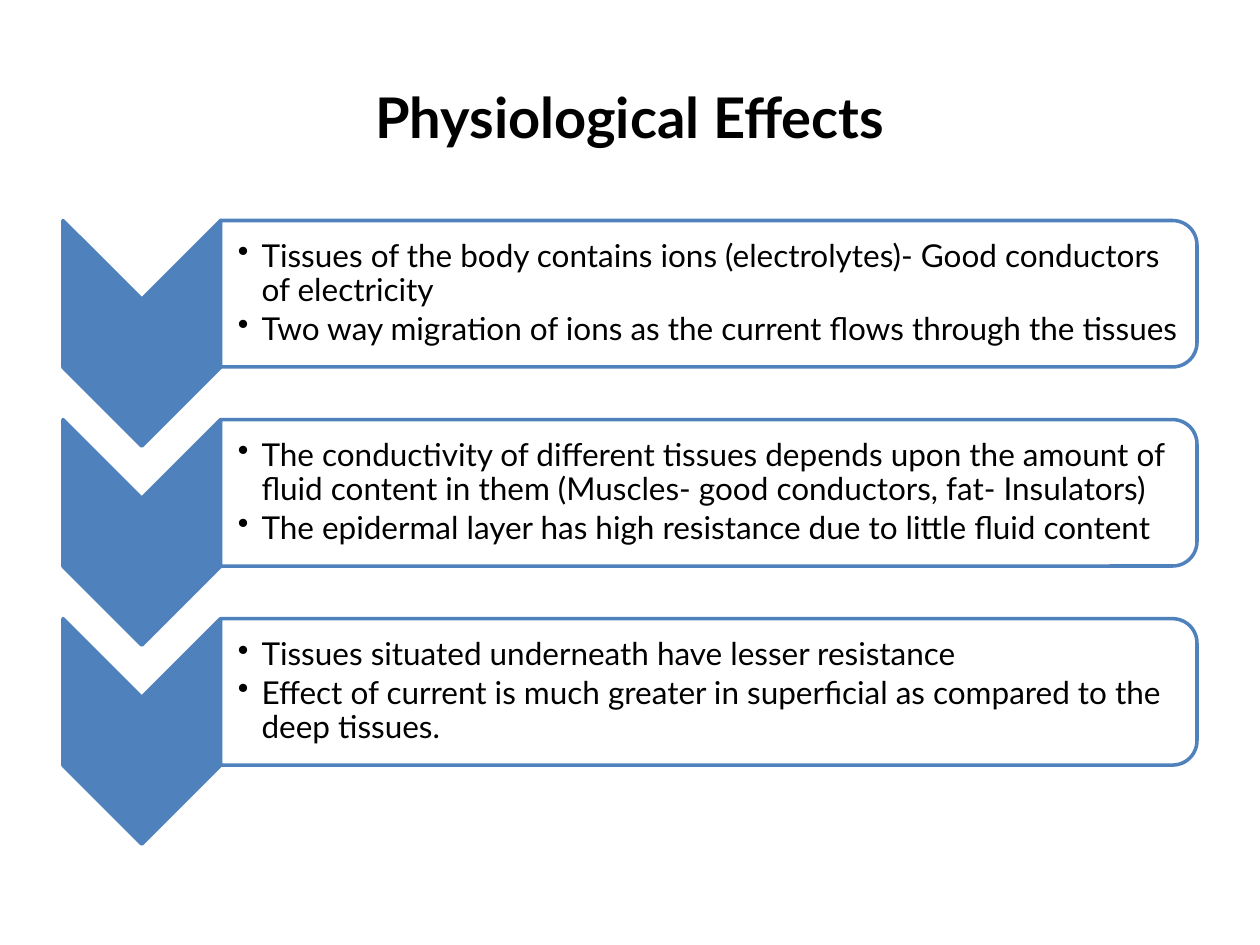
from lxml import etree
from pptx import Presentation
from pptx.dml.color import RGBColor
from pptx.enum.shapes import MSO_SHAPE
from pptx.enum.text import MSO_ANCHOR, PP_ALIGN
from pptx.oxml.ns import qn
from pptx.util import Pt

CHEVRON = MSO_SHAPE.CHEVRON
CARD = MSO_SHAPE.ROUND_2_SAME_RECTANGLE
MIDDLE = MSO_ANCHOR.MIDDLE
CENTER = PP_ALIGN.CENTER

COLORS = {"accent": "4F81BD", "card": "FFFFFF", "text": "000000"}

EFFECTS = [
    [
        "Tissues of the body contains ions (electrolytes)- Good conductors of electricity",
        "Two way migration of ions as the current flows through the tissues",
    ],
    [
        "The conductivity of different tissues depends upon the amount of fluid content "
        "in them (Muscles- good conductors, fat- Insulators)",
        "The epidermal layer has high resistance due to little fluid content",
    ],
    [
        "Tissues situated underneath have lesser resistance",
        "Effect of current is much greater in superficial as compared to the deep tissues.",
    ],
]

LEFT, TOP, ROW_STEP = 36, 126, 113.76
CHEVRON_WIDTH, CHEVRON_HEIGHT = 90, 128.9
CARD_WIDTH, CARD_HEIGHT = 558, 83.7


class SlideBuilder:
    font_name = "Lato"
    line_width = 2
    bullet_indent = 13.5

    def __init__(self, slide):
        self.slide = slide

    def color(self, name):
        return RGBColor.from_string(COLORS[name])

    def format_font(self, font, size, bold=False):
        font.name = self.font_name
        font.size = Pt(size)
        font.bold = bold
        font.color.rgb = self.color("text")

    def title(self, text, left, top, width, height):
        shape = self.slide.shapes.title
        shape.left, shape.top = Pt(left), Pt(top)
        shape.width, shape.height = Pt(width), Pt(height)
        text_frame = shape.text_frame
        text_frame.text = text
        text_frame.vertical_anchor = MIDDLE
        paragraph = text_frame.paragraphs[0]
        paragraph.alignment = CENTER
        self.format_font(paragraph.runs[0].font, 32, bold=True)

    def turned_shape(self, kind, left, top, width, height, fill, opacity=100):
        offset = (width - height) / 2
        shape = self.slide.shapes.add_shape(
            kind, Pt(left + offset), Pt(top - offset), Pt(height), Pt(width)
        )
        shape.rotation = 90
        shape.shadow.inherit = False
        shape.fill.solid()
        shape.fill.fore_color.rgb = self.color(fill)
        if opacity < 100:
            color_element = shape.fill._xPr.find(f"{qn('a:solidFill')}/{qn('a:srgbClr')}")
            etree.SubElement(color_element, qn("a:alpha"), val=str(opacity * 1000))
        shape.line.color.rgb = self.color("accent")
        shape.line.width = Pt(self.line_width)
        return shape

    def bullet_list(self, items, left, top, width, height):
        box = self.slide.shapes.add_textbox(Pt(left), Pt(top), Pt(width), Pt(height))
        text_frame = box.text_frame
        text_frame.word_wrap = True
        text_frame.vertical_anchor = MIDDLE
        text_frame.margin_left = Pt(10)
        text_frame.margin_top = text_frame.margin_right = text_frame.margin_bottom = Pt(0.9)
        text_frame.text = "\n".join(items)
        for paragraph in text_frame.paragraphs:
            paragraph.level = 1
            paragraph.line_spacing = 0.9
            paragraph.space_after = Pt(2.8)
            properties = paragraph._p.get_or_add_pPr()
            properties.set("marL", str(Pt(self.bullet_indent)))
            properties.set("indent", str(-Pt(self.bullet_indent)))
            etree.SubElement(properties, qn("a:buChar"), char="•")
            self.format_font(paragraph.runs[0].font, 18)


def main():
    presentation = Presentation()
    presentation.slide_width, presentation.slide_height = Pt(720), Pt(540)
    slide = presentation.slides.add_slide(presentation.slide_layouts[5])
    builder = SlideBuilder(slide)
    builder.title("Physiological Effects", 36, 21.6, 648, 90)

    card_left = LEFT + CHEVRON_WIDTH
    for row, items in enumerate(EFFECTS):
        top = TOP + row * ROW_STEP
        builder.turned_shape(CHEVRON, LEFT, top, CHEVRON_WIDTH, CHEVRON_HEIGHT, "accent")
        builder.turned_shape(CARD, card_left, top, CARD_WIDTH, CARD_HEIGHT, "card", opacity=90)
        builder.bullet_list(items, card_left, top + 4, CARD_WIDTH - 4, CARD_HEIGHT - 8)

    presentation.save("out.pptx")


if __name__ == "__main__":
    main()
